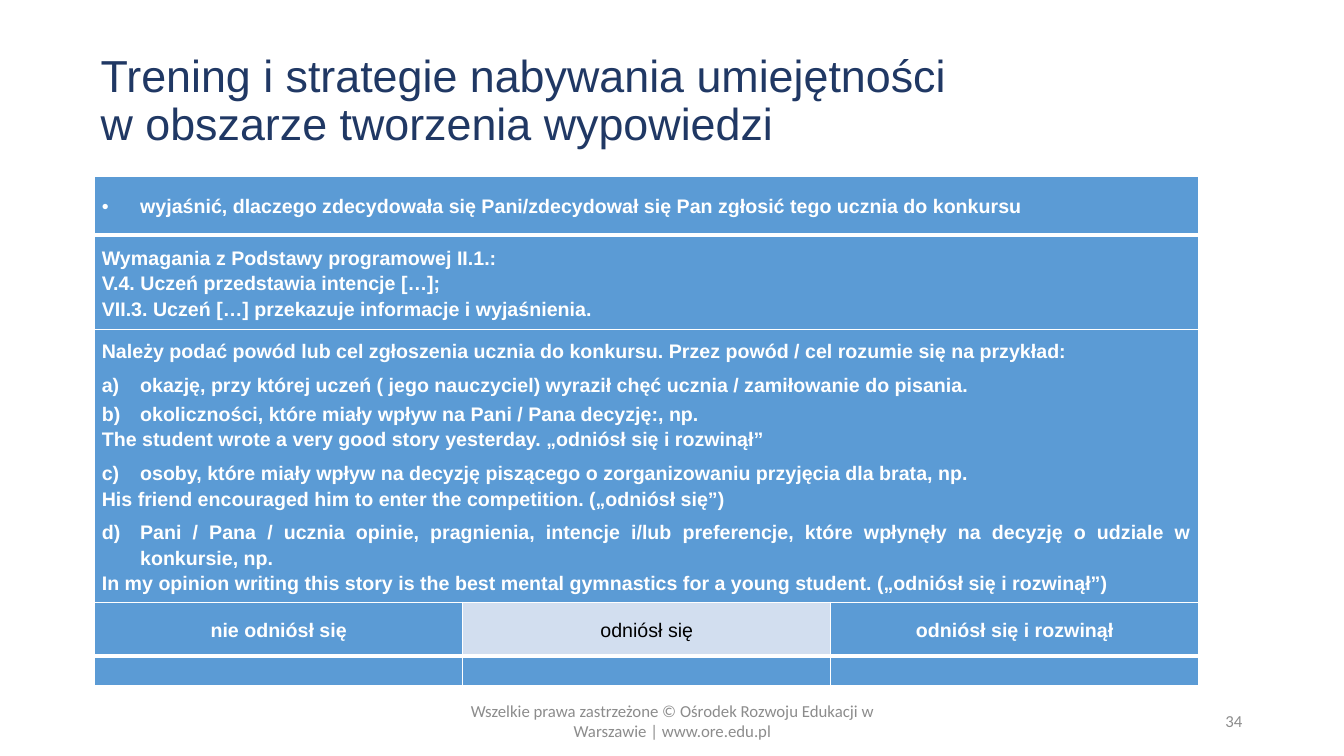
from lxml.etree import SubElement
from pptx import Presentation
from pptx.dml.color import RGBColor
from pptx.enum.text import MSO_ANCHOR as Anchor, PP_ALIGN as Align
from pptx.oxml.ns import qn
from pptx.util import Pt

PX = 9144  # 100 px to the inch
NAVY = RGBColor(0x20, 0x38, 0x64)
GRAY = RGBColor(0x8C, 0x8C, 0x8C)
BLUE = RGBColor(0x5B, 0x9B, 0xD5)
PALE = RGBColor(0xD2, 0xDE, 0xEF)
WHITE = RGBColor(0xFF, 0xFF, 0xFF)
BLACK = RGBColor(0, 0, 0)

TITLE_FONT = dict(name="Arial", size=Pt(32), color=NAVY)
FOOTER_FONT = dict(name="Calibri", size=Pt(12), color=GRAY)
BODY_FONT = dict(name="Arial", size=Pt(14), bold=True, color=WHITE)
PLAIN_FONT = dict(BODY_FONT, bold=False, color=BLACK)

LEFT = dict(line_spacing=1.15)
JUSTIFIED = dict(alignment=Align.JUSTIFY, line_spacing=1.15)
TOPIC = dict(JUSTIFIED, line_spacing=1.07)
INTRO = dict(JUSTIFIED, space_after=Pt(3))
REASON = dict(JUSTIFIED, space_before=Pt(3))
EXAMPLE = INTRO
CENTERED = dict(alignment=Align.CENTER, line_spacing=1.15)

COLUMN_WIDTH = 365
ROW_HEIGHTS = [58, 94, 250, 53, 30]
THICK_EDGES = (1, 4)  # row boundaries with the heavy rule
HANGING = 38

TOPIC_TEXT = [
    ("wyjaśnić, dlaczego zdecydowała się Pani/zdecydował się Pan zgłosić tego ucznia do konkursu",
     TOPIC, "•"),
]
REQUIREMENTS = [
    ("Wymagania z Podstawy programowej II.1.:", JUSTIFIED, None),
    ("V.4. Uczeń przedstawia intencje […];", LEFT, None),
    ("VII.3. Uczeń […] przekazuje informacje i wyjaśnienia.", JUSTIFIED, None),
]
CRITERIA = [
    ("Należy podać powód lub cel zgłoszenia ucznia do konkursu. Przez powód / cel rozumie się na przykład:",
     INTRO, None),
    ("okazję, przy której uczeń ( jego nauczyciel) wyraził chęć ucznia / zamiłowanie do pisania.",
     REASON, 1),
    ("okoliczności, które miały wpływ na Pani / Pana decyzję:, np.", REASON, 2),
    ("The student wrote a very good story yesterday. „odniósł się i rozwinął”", EXAMPLE, None),
    ("osoby, które miały wpływ na decyzję piszącego o zorganizowaniu przyjęcia dla brata, np.",
     REASON, 3),
    ("His friend encouraged him to enter the competition. („odniósł się”)", EXAMPLE, None),
    ("Pani / Pana / ucznia opinie, pragnienia, intencje i/lub preferencje, "
     "które wpłynęły na decyzję o udziale w konkursie, np.", REASON, 4),
    ("In my opinion writing this story is the best mental gymnastics for a young student. "
     "(„odniósł się i rozwinął”)", JUSTIFIED, None),
]
RATINGS = [
    ("nie odniósł się", BODY_FONT, BLUE),
    ("odniósł się", PLAIN_FONT, PALE),
    ("odniósł się i rozwinął", BODY_FONT, BLUE),
]


def apply_format(target, values):
    for attribute, value in values.items():
        setattr(target, attribute, value)


def apply_font(font, values):
    apply_format(font, {key: value for key, value in values.items() if key != "color"})
    font.color.rgb = values["color"]


def add_marker(paragraph, marker):
    """Hang the paragraph on a bullet character or on a letter given by its number."""
    properties = paragraph._p.get_or_add_pPr()
    properties.set("marL", str(HANGING * PX))
    properties.set("indent", str(-HANGING * PX))
    if isinstance(marker, int):
        SubElement(properties, qn("a:buAutoNum"), type="alphaLcParenR", startAt=str(marker))
    else:
        SubElement(properties, qn("a:buFont"), typeface="Arial")
        SubElement(properties, qn("a:buChar"), char=marker)


def write_paragraphs(frame, entries, font):
    for index, (text, layout, marker) in enumerate(entries):
        paragraph = frame.add_paragraph() if index else frame.paragraphs[0]
        if marker:
            add_marker(paragraph, marker)
        apply_format(paragraph, layout)
        paragraph.text = text
        for run in paragraph.runs:
            apply_font(run.font, font)


def add_text(slide, box, text, font, layout):
    frame = slide.shapes.add_textbox(*(length * PX for length in box)).text_frame
    apply_format(frame, dict(word_wrap=True, vertical_anchor=Anchor.MIDDLE))
    write_paragraphs(frame, [(text, layout, None)], font)


def style_cell(cell, row, fill):
    margins = dict(margin_left=7 * PX, margin_right=7 * PX, margin_top=0, margin_bottom=0)
    apply_format(cell, dict(margins, vertical_anchor=Anchor.MIDDLE))
    properties = cell._tc.get_or_add_tcPr()
    edges = dict(lnL=None, lnR=None, lnT=row, lnB=row + 1)
    for side, boundary in edges.items():
        width = Pt(3 if boundary in THICK_EDGES else 1)
        line = SubElement(properties, qn(f"a:{side}"), w=str(width))
        SubElement(SubElement(line, qn("a:solidFill")), qn("a:srgbClr"), val=str(WHITE))
    cell.fill.solid()
    cell.fill.fore_color.rgb = fill


def add_criteria_table(slide):
    columns = len(RATINGS)
    box = (94, 175, columns * COLUMN_WIDTH, sum(ROW_HEIGHTS))
    table = slide.shapes.add_table(len(ROW_HEIGHTS), columns, *(length * PX for length in box)).table
    apply_format(table, dict(first_row=False, horz_banding=False))
    for column in table.columns:
        column.width = COLUMN_WIDTH * PX
    for row, height in enumerate(ROW_HEIGHTS):
        table.rows[row].height = height * PX
        for column in range(columns):
            style_cell(table.cell(row, column), row, BLUE)

    for row, entries in enumerate([TOPIC_TEXT, REQUIREMENTS, CRITERIA]):
        heading = table.cell(row, 0)
        heading.merge(table.cell(row, columns - 1))
        write_paragraphs(heading.text_frame, entries, BODY_FONT)
    for column, (label, font, fill) in enumerate(RATINGS):
        rating = table.cell(3, column)
        rating.fill.fore_color.rgb = fill
        write_paragraphs(rating.text_frame, [(label, CENTERED, None)], font)


def main():
    deck = Presentation()
    apply_format(deck, dict(slide_width=1333 * PX, slide_height=750 * PX))
    slide = deck.slides.add_slide(deck.slide_layouts[6])
    add_text(slide, (90, 40, 1017, 122),
             "Trening i strategie nabywania umiejętności\vw obszarze tworzenia wypowiedzi",
             TITLE_FONT, dict(line_spacing=0.9))
    add_criteria_table(slide)
    add_text(slide, (442, 695, 450, 40),
             "Wszelkie prawa zastrzeżone © Ośrodek Rozwoju Edukacji w Warszawie | www.ore.edu.pl",
             FOOTER_FONT, dict(alignment=Align.CENTER))
    add_text(slide, (942, 695, 300, 40), "34", FOOTER_FONT, dict(alignment=Align.RIGHT))
    deck.save("out.pptx")


if __name__ == "__main__":
    main()
